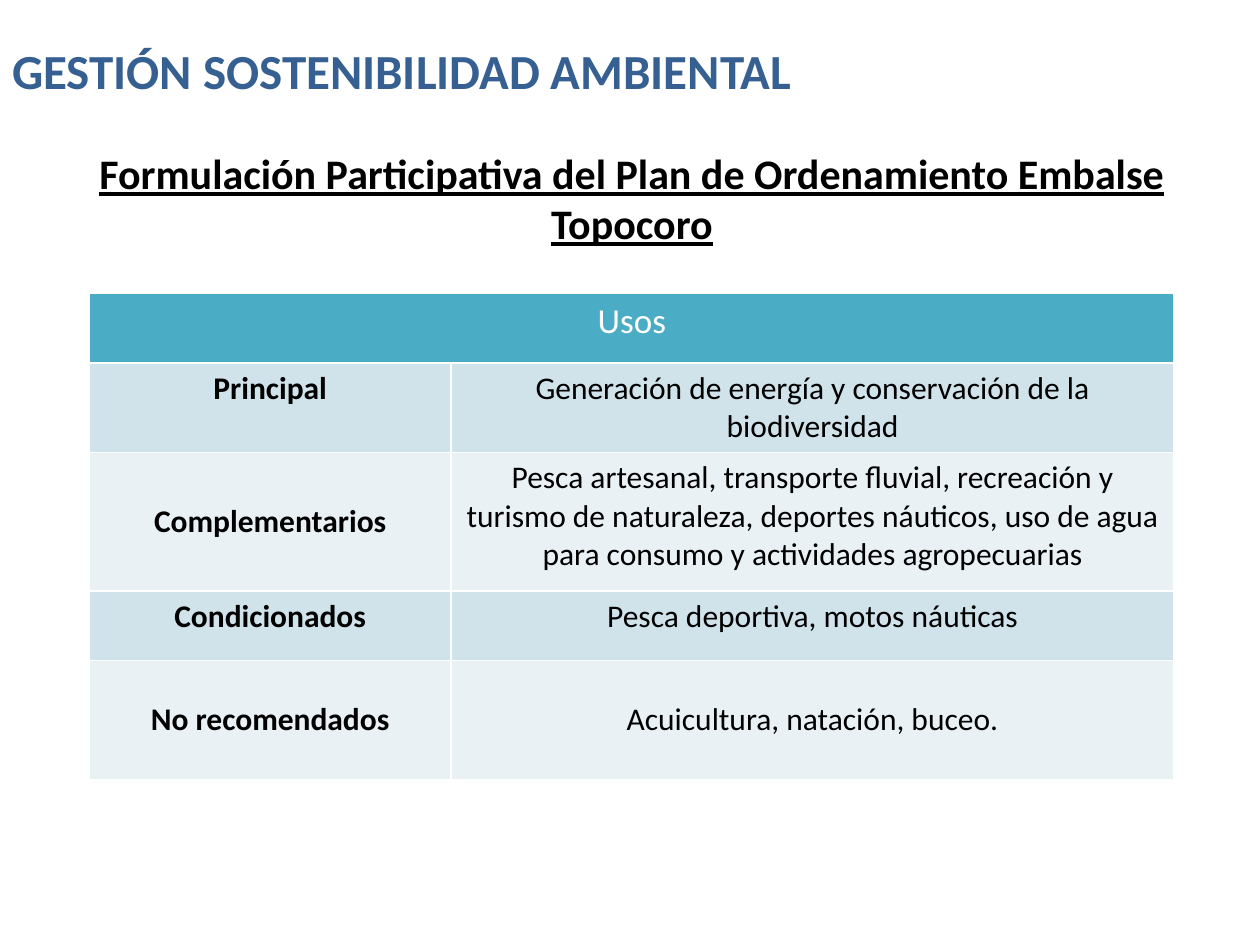
import pptx
import pptx.util
import pptx.dml.color
import pptx.enum.text
from pptx.util import Inches

COLORS = {
    "title": "376092",
    "text": "000000",
    "white": "FFFFFF",
    "header": "4BACC6",
    "band_dark": "D0E3EA",
    "band_light": "E9F1F5",
}
ALIGN = pptx.enum.text.PP_ALIGN
ANCHOR = pptx.enum.text.MSO_ANCHOR


def write_text(text_frame, text, size=18, color="text", bold=False, underline=None, align=ALIGN.CENTER):
    text_frame.word_wrap = True
    paragraph = text_frame.paragraphs[0]
    paragraph.alignment = align
    run = paragraph.add_run()
    run.text = text
    run.font.name = "Calibri"
    run.font.size = pptx.util.Pt(size)
    run.font.bold = bold
    run.font.underline = underline
    run.font.color.rgb = pptx.dml.color.RGBColor.from_string(COLORS[color])


def fill_cell(cell, color, anchor=ANCHOR.TOP):
    cell.fill.solid()
    cell.fill.fore_color.rgb = pptx.dml.color.RGBColor.from_string(COLORS[color])
    cell.vertical_anchor = anchor


presentation = pptx.Presentation()
presentation.slide_width = Inches(10)
presentation.slide_height = Inches(7.5)
slide = presentation.slides.add_slide(presentation.slide_layouts[6])

uses = [
    ("Principal", "Generación de energía y conservación de la biodiversidad", ANCHOR.TOP, ANCHOR.TOP),
    (
        "Complementarios",
        "Pesca artesanal, transporte fluvial, recreación y turismo de naturaleza, deportes náuticos, "
        "uso de agua para consumo y actividades agropecuarias",
        ANCHOR.MIDDLE,
        ANCHOR.TOP,
    ),
    ("Condicionados", "Pesca deportiva, motos náuticas", ANCHOR.TOP, ANCHOR.TOP),
    ("No recomendados", "Acuicultura, natación, buceo.", ANCHOR.MIDDLE, ANCHOR.MIDDLE),
]

table = slide.shapes.add_table(
    len(uses) + 1, 2, Inches(0.71), Inches(2.33), Inches(8.61), Inches(3.7)
).table
for column, width in zip(table.columns, (2.87, 5.74)):
    column.width = Inches(width)
for row, height in zip(table.rows, (0.55, 0.55, 1.1, 0.55, 0.95)):
    row.height = Inches(height)

header = table.cell(0, 0)
header.merge(table.cell(0, 1))
fill_cell(header, "header")
write_text(header.text_frame, "Usos", size=20, color="white")

for index, (category, description, category_anchor, description_anchor) in enumerate(uses, start=1):
    band = "band_dark" if index % 2 else "band_light"
    category_cell, description_cell = table.cell(index, 0), table.cell(index, 1)
    fill_cell(category_cell, band, category_anchor)
    fill_cell(description_cell, band, description_anchor)
    write_text(category_cell.text_frame, category, bold=True)
    write_text(description_cell.text_frame, description)

subtitle = slide.shapes.add_textbox(Inches(0.19), Inches(1.12), Inches(9.65), Inches(0.94))
write_text(
    subtitle.text_frame,
    "Formulación Participativa del Plan de Ordenamiento Embalse Topocoro",
    size=24,
    bold=True,
    underline=True,
)

title = slide.shapes.add_textbox(Inches(0), Inches(0.27), Inches(7.31), Inches(0.57))
write_text(
    title.text_frame, "GESTIÓN SOSTENIBILIDAD AMBIENTAL", size=28, color="title", bold=True, align=ALIGN.LEFT
)
title.text_frame.auto_size = pptx.enum.text.MSO_AUTO_SIZE.SHAPE_TO_FIT_TEXT

presentation.save("out.pptx")
